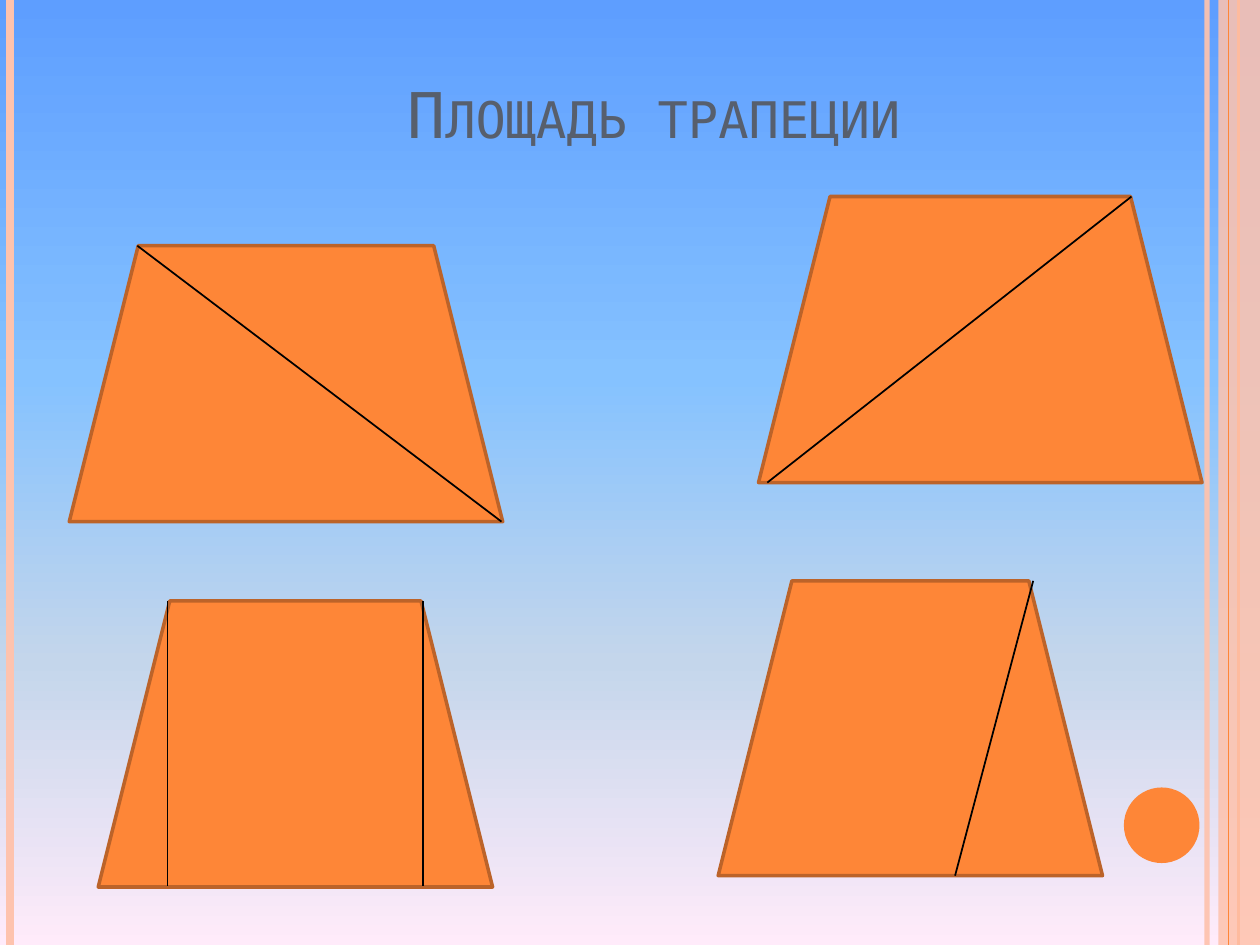
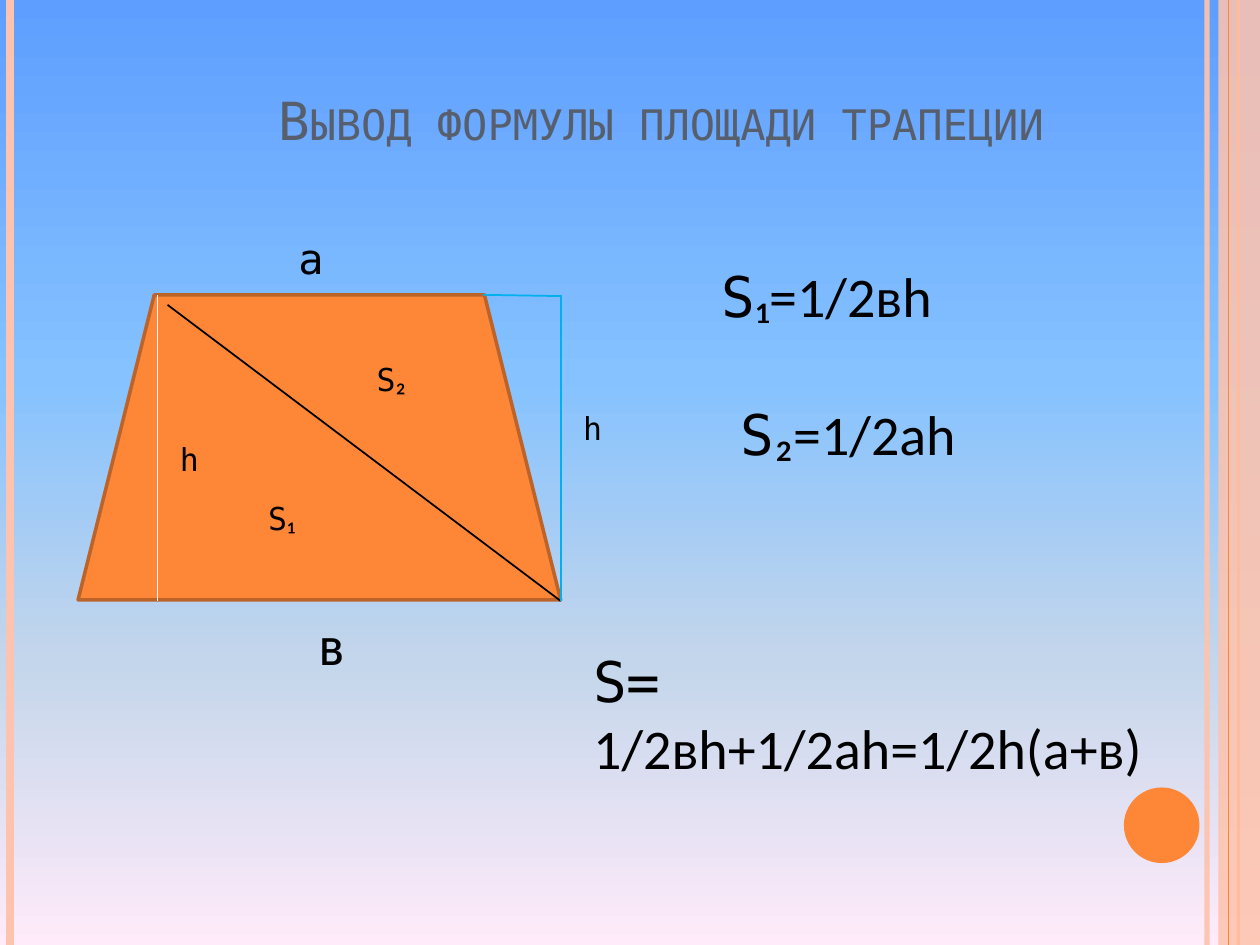
from lxml import etree
from pptx import Presentation
from pptx import util as u
from pptx.dml.color import RGBColor
from pptx.enum import shapes, text
from pptx.oxml.ns import qn

PX = 9144  # 100 px to the inch
MONO, SANS = "DejaVu Sans Mono", "Calibri"
ORANGE, RUST, PEACH = "FE8637", "BC6329", "FEC3AE"
BLACK, WHITE, CYAN, GREY = "000000", "FFFFFF", "00B0F0", "575F6D"
SKY = [(0, "5E9EFF"), (40, "85C2FF"), (70, "C4D6EB"), (100, "FFEBFA")]
hue = RGBColor.from_string


def line(slide, x1, y1, x2, y2, color, width=1.0):
    ends = [v * PX for v in (x1, y1, x2, y2)]
    link = slide.shapes.add_connector(shapes.MSO_CONNECTOR.STRAIGHT, *ends)
    link.line.color.rgb = hue(color)
    link.line.width = u.Pt(width)
    etree.SubElement(link.element.spPr, qn("a:effectLst"))
    return link


def write(slide, box, size, runs, color=BLACK):
    """Add a wrapping text box; runs are (words, font) pairs."""
    frame = slide.shapes.add_textbox(*[v * PX for v in box]).text_frame
    frame.word_wrap = True
    for words, font in runs:
        run = frame.paragraphs[0].add_run()
        run.text = words
        run.font.name = font
        run.font.size = u.Pt(size)
        run.font.color.rgb = hue(color)
    return frame


# Each page: title, its box and size, trapezoids, lines, labels
pages = [
    ("Площадь трапеции", (94, 31, 850, 94), 36,
     [(55, 195, 344, 219), (602, 156, 352, 227),
      (78, 477, 313, 227), (570, 461, 305, 234)],
     [(109, 195, 398, 414, BLACK), (898, 156, 609, 383, BLACK),
      (133, 477, 133, 703, BLACK), (336, 477, 336, 703, BLACK),
      (820, 461, 758, 695, BLACK)],
     []),
    ("Вывод формулы площади трапеции", (100, 30, 850, 95), 30,
     [(62, 234, 383, 242)],
     [(133, 242, 445, 477, BLACK), (125, 234, 125, 477, WHITE),
      (383, 234, 445, 235, CYAN), (445, 477, 445, 234, CYAN)],
     [((227, 180, 86, 50), 24, [("а", MONO)]),
      ((242, 484, 63, 57), 28, [("в", MONO)]),
      ((133, 344, 39, 40), 18, [("h", MONO)]),
      ((453, 320, 55, 40), 18, [("h", MONO)]),
      ((203, 391, 63, 40), 18, [("S", MONO), ("₁", SANS)]),
      ((289, 281, 63, 40), 18, [("S", MONO), ("₂", SANS)]),
      ((563, 203, 250, 94), 32, [("S", MONO), ("₁=1/2вh", SANS)]),
      ((578, 312, 234, 64), 32, [("S", MONO), ("₂=1/2аh", SANS)]),
      ((461, 508, 508, 94), 32,
       [("S= ", MONO), ("1/2вh+1/2аh=1/2h(а+в)", SANS)])]),
]

deck = Presentation()
deck.slide_width, deck.slide_height = 1000 * PX, 750 * PX

for title, place, size, traps, lines, labels in pages:
    slide = deck.slides.add_slide(deck.slide_layouts[6])

    # Sky gradient from top to bottom
    fill = slide.background.fill
    fill.gradient()
    fill.gradient_angle = 270
    stops = slide.element.find(".//" + qn("a:gsLst"))
    for stop in list(stops):
        stops.remove(stop)
    for pos, color in SKY:
        stop = etree.SubElement(stops, qn("a:gs"), pos=str(pos * 1000))
        etree.SubElement(stop, qn("a:srgbClr"), val=color)

    # Side bands and the round badge
    edge = line(slide, 958, 0, 958, 750, PEACH, 3)
    line(slide, 8, 0, 8, 750, PEACH, 4.5)
    line(slide, 983, 0, 983, 750, ORANGE, 1.5)
    band = slide.shapes.add_shape(shapes.MSO_SHAPE.RECTANGLE,
                                  967 * PX, 0, 33 * PX, 750 * PX)
    line(slide, 975, 0, 975, 750, ORANGE, 0.75)
    badge = slide.shapes.add_shape(shapes.MSO_SHAPE.OVAL,
                                   892 * PX, 625 * PX, 60 * PX, 60 * PX)
    for shape, color in ((band, PEACH), (badge, ORANGE)):
        shape.shadow.inherit = False
        shape.fill.solid()
        shape.fill.fore_color.rgb = hue(color)
        shape.line.fill.background()
    for shape, alpha in ((edge, 93), (band, 87)):
        tint = shape.element.spPr.find(".//" + qn("a:srgbClr"))
        etree.SubElement(tint, qn("a:alpha"), val=str(alpha * 1000))

    head = write(slide, place, size, [(title, MONO)], GREY)
    head.vertical_anchor = text.MSO_ANCHOR.BOTTOM
    head.paragraphs[0].alignment = text.PP_ALIGN.CENTER
    head.paragraphs[0].runs[0].font._element.set("cap", "small")

    for box in traps:
        trap = slide.shapes.add_shape(shapes.MSO_SHAPE.TRAPEZOID,
                                      *[v * PX for v in box])
        trap.shadow.inherit = False
        trap.fill.solid()
        trap.fill.fore_color.rgb = hue(ORANGE)
        trap.line.color.rgb = hue(RUST)
        trap.line.width = u.Pt(2)
    for item in lines:
        line(slide, *item)
    for label in labels:
        write(slide, *label)

deck.save("out.pptx")
